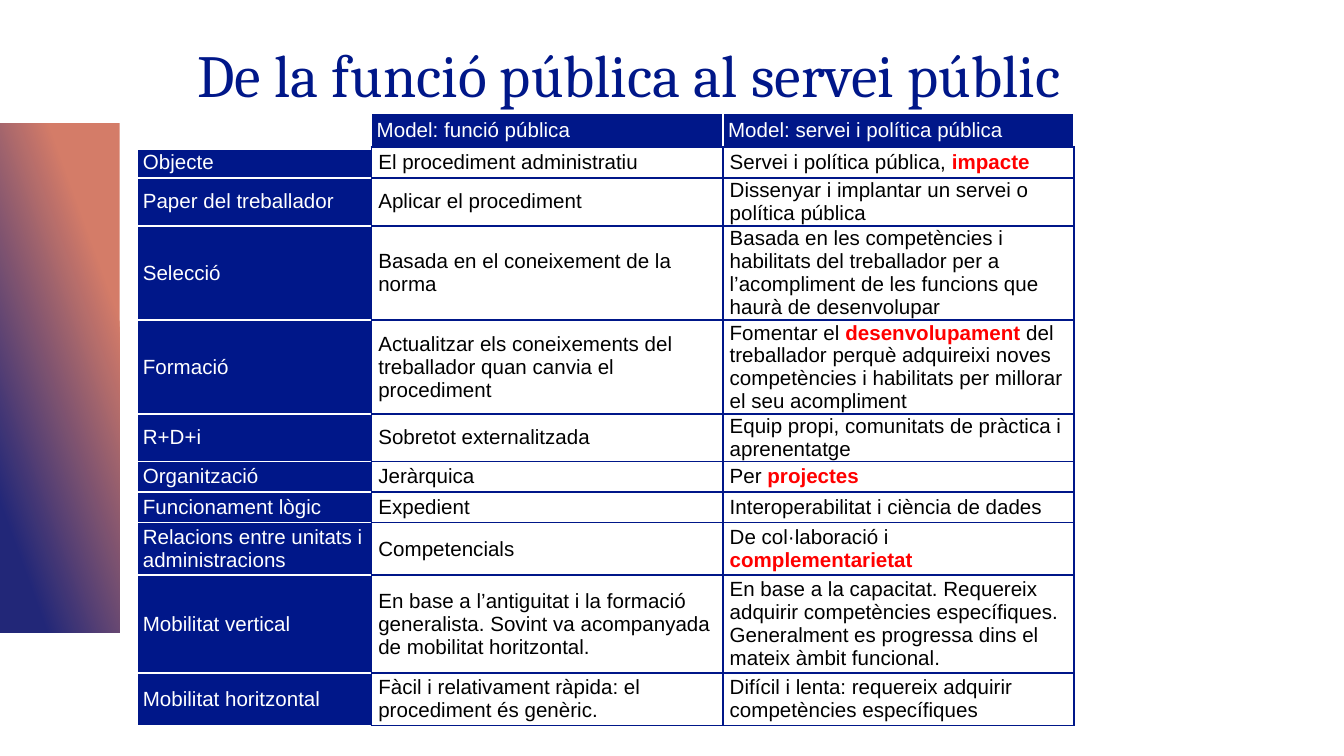
from lxml.etree import SubElement
from pptx import Presentation
from pptx.dml.color import RGBColor as Rgb
from pptx.enum.shapes import MSO_SHAPE as Shape
from pptx.enum.text import MSO_ANCHOR as Anchor, PP_ALIGN as Align
from pptx.oxml.ns import qn
from pptx.util import Cm, Pt

COLORS = {
    "navy": "001789",
    "white": "FFFFFF",
    "black": "000000",
    "red": "FF0000",
    "coral": "D47C68",
    "indigo": "222778",
}
TITLE = "De la funció pública al servei públic"
HEADINGS = ("", "Model: funció pública", "Model: servei i política pública")
COLUMN_WIDTHS = (4.42, 6.64, 6.64)
HEADING_HEIGHT = 0.64
MODELS = [
    (0.58, "Objecte", "El procediment administratiu",
     "Servei i política pública, *impacte"),
    (0.91, "Paper del treballador", "Aplicar el procediment",
     "Dissenyar i implantar un servei o política pública"),
    (1.78, "Selecció", "Basada en el coneixement de la norma",
     "Basada en les competències i habilitats del treballador per a "
     "l’acompliment de les funcions que haurà de desenvolupar"),
    (1.78, "Formació",
     "Actualitzar els coneixements del treballador quan canvia el procediment",
     "Fomentar el *desenvolupament* del treballador perquè adquireixi noves "
     "competències i habilitats per millorar el seu acompliment"),
    (0.89, "R+D+i", "Sobretot externalitzada",
     "Equip propi, comunitats de pràctica i aprenentatge"),
    (0.58, "Organització", "Jeràrquica", "Per *projectes"),
    (0.58, "Funcionament lògic", "Expedient",
     "Interoperabilitat i ciència de dades"),
    (0.99, "Relacions entre unitats i administracions", "Competencials",
     "De col·laboració i *complementarietat"),
    (1.85, "Mobilitat vertical",
     "En base a l’antiguitat i la formació generalista. Sovint va "
     "acompanyada de mobilitat horitzontal.",
     "En base a la capacitat. Requereix adquirir competències específiques. "
     "Generalment es progressa dins el mateix àmbit funcional."),
    (0.99, "Mobilitat horitzontal",
     "Fàcil i relativament ràpida: el procediment és genèric.",
     "Difícil i lenta: requereix adquirir competències específiques"),
]


def color(name):
    return Rgb.from_string(COLORS[name])


def write(para, text, size=11, font="Arial", ink="black", accent="red"):
    para.alignment = Align.LEFT
    if not text:
        SubElement(para._p, qn("a:endParaRPr"), sz=str(size * 100))
        return
    for index, part in enumerate(text.split("*")):
        emphasized = index % 2 == 1
        span = para.add_run()
        span.text = part
        span.font.size = Pt(size)
        span.font.name = font
        span.font.bold = emphasized
        span.font.color.rgb = color(accent if emphasized else ink)


class SlideBuilder:
    def __init__(self, deck):
        self.slide = deck.slides.add_slide(deck.slide_layouts[5])

    def title(self, text, left, top, width, height):
        box = self.slide.shapes.title
        box.left, box.top = Cm(left), Cm(top)
        box.width, box.height = Cm(width), Cm(height)
        box.text_frame.vertical_anchor = Anchor.BOTTOM
        para = box.text_frame.paragraphs[0]
        para.line_spacing = 0.9
        write(para, text, size=32, font="Cambria", ink="navy")

    def gradient_band(self, left, top, width, height):
        band = self.slide.shapes.add_shape(
            Shape.RECTANGLE, Cm(left), Cm(top), Cm(width), Cm(height))
        band.shadow.inherit = False
        band.line.fill.background()
        band.rotation = 90
        band._element.spPr.find(qn("a:xfrm")).set("flipV", "1")
        band.fill.gradient()
        band.fill.gradient_angle = 70
        stops = ((0.23, "coral"), (0.85, "indigo"))
        for stop, (position, name) in zip(band.fill.gradient_stops, stops):
            stop.position = position
            stop.color.rgb = color(name)

    def borders(self, cell, left="navy", right="navy", top="navy",
                bottom="navy", bottom_width=1):
        properties = cell._tc.get_or_add_tcPr()
        sides = (("L", left, 1), ("R", right, 1), ("T", top, 1),
                 ("B", bottom, bottom_width))
        for side, name, width in sides:
            line = SubElement(properties, qn(f"a:ln{side}"), w=str(Pt(width)))
            fill = SubElement(line, qn("a:solidFill"))
            SubElement(fill, qn("a:srgbClr"), val=COLORS[name])

    def cell(self, cell, text, heading=False, margin=0.1, **edges):
        self.borders(cell, **edges)
        cell.fill.solid()
        cell.fill.fore_color.rgb = color("navy" if heading else "white")
        cell.vertical_anchor = Anchor.MIDDLE
        cell.margin_left = cell.margin_right = Cm(margin)
        cell.margin_top = cell.margin_bottom = 0
        write(cell.text_frame.paragraphs[0], text,
              ink="white" if heading else "black")

    def table(self, left, top):
        heights = [HEADING_HEIGHT] + [model[0] for model in MODELS]
        table = self.slide.shapes.add_table(
            len(heights), len(COLUMN_WIDTHS), Cm(left), Cm(top),
            Cm(sum(COLUMN_WIDTHS)), Cm(sum(heights))).table
        table.first_row = table.horz_banding = False
        for column, width in zip(table.columns, COLUMN_WIDTHS):
            column.width = Cm(width)
        for row, height in zip(table.rows, heights):
            row.height = Cm(height)
        white = dict.fromkeys(("left", "right", "top", "bottom"), "white")
        self.cell(table.cell(0, 0), HEADINGS[0], bottom_width=3, **white)
        for column in (1, 2):
            self.cell(table.cell(0, column), HEADINGS[column], heading=True,
                      **{**white, "bottom": "navy"})
        for row, (_, label, *descriptions) in enumerate(MODELS, 1):
            self.cell(table.cell(row, 0), label, heading=True,
                      **{**white, "right": "navy"})
            for column, text in enumerate(descriptions, 1):
                self.cell(table.cell(row, column), text, margin=0.13)


def main():
    deck = Presentation()
    deck.slide_width, deck.slide_height = Cm(25.4), Cm(14.29)
    page = SlideBuilder(deck)
    page.gradient_band(-3.68, 6.02, 9.63, 2.26)
    page.title(TITLE, 3.48, 0.71, 21.13, 1.5)
    page.table(2.6, 2.14)
    deck.save("out.pptx")


if __name__ == "__main__":
    main()
